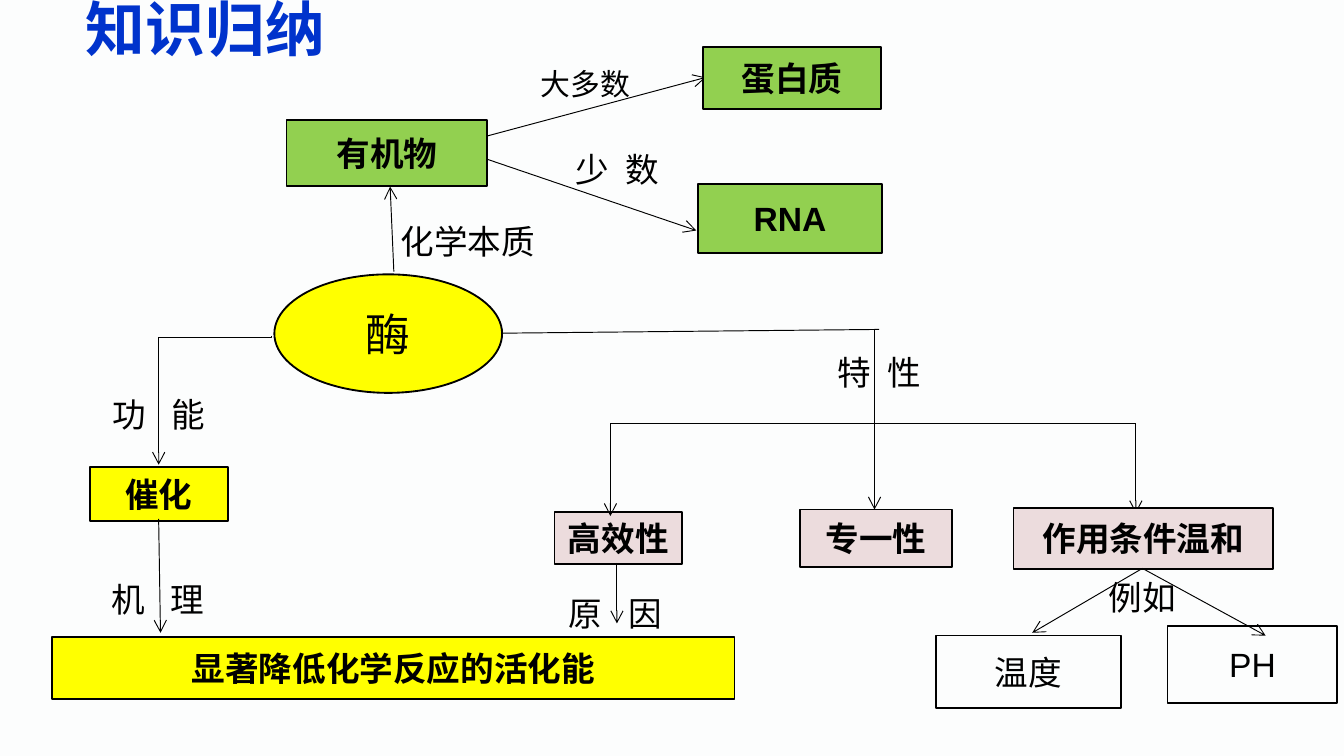
from lxml.etree import SubElement as Sub
from pptx import Presentation
from pptx.dml.color import RGBColor as RGB
from pptx.enum.shapes import MSO_CONNECTOR as LINK, MSO_SHAPE as SHAPE
from pptx.enum.text import MSO_ANCHOR as ANCHOR, MSO_AUTO_SIZE as FIT, PP_ALIGN as ALIGN
from pptx.oxml.ns import qn
from pptx.util import Pt

COLORS = {"back": "FCFDFD", "ink": "000000", "title": "0033CC", "green": "92D050",
          "yellow": "FFFF00", "pink": "ECDCDD"}
CJK = "Noto Sans CJK SC"


def write(shape, text, size=18, bold=False, color="ink", font="Arial",
          align=ALIGN.LEFT, anchor=ANCHOR.TOP, track=0):
    frame = shape.text_frame
    frame.word_wrap = True
    frame.vertical_anchor = anchor
    para = frame.paragraphs[0]
    para.alignment = align
    run = para.add_run()
    run.text = text
    run.font.size, run.font.bold, run.font.name = Pt(size), bold, font
    run.font.color.rgb = RGB.from_string(COLORS[color])
    props = run.font._element
    Sub(props, qn("a:ea"), typeface=CJK)
    if track:
        props.set("spc", str(int(track * 100)))


def link(x1, y1, x2, y2, arrow=True, bend=None):
    """Draw a line; bend is the share of the drop before an elbow turns."""
    kind = LINK.STRAIGHT if bend is None else LINK.ELBOW
    if bend is not None:
        # A quarter turn makes the elbow leave downwards
        mid, half = (x1 + x2) / 2, (y1 + y2) / 2
        wide, high = y2 - y1, x1 - x2
        x1, x2 = mid - wide / 2, mid + wide / 2
        y1, y2 = half - high / 2, half + high / 2
    line = slide.shapes.add_connector(kind, Pt(x1), Pt(y1), Pt(x2), Pt(y2))
    line.line.color.rgb = RGB.from_string(COLORS["ink"])
    line.line.width = Pt(0.5)
    props = line._element.spPr
    if bend is not None:
        props.find(qn("a:xfrm")).set("rot", "5400000")
        guides = props.find(qn("a:prstGeom")).find(qn("a:avLst"))
        Sub(guides, qn("a:gd"), name="adj1", fmla=f"val {round(bend * 100000)}")
    if arrow:
        Sub(props.find(qn("a:ln")), qn("a:tailEnd"), type="arrow")
    Sub(props, qn("a:effectLst"))


deck = Presentation()
deck.slide_width, deck.slide_height = Pt(720), Pt(405)
slide = deck.slides.add_slide(deck.slide_layouts[5])
slide.background.fill.solid()
slide.background.fill.fore_color.rgb = RGB.from_string(COLORS["back"])

# Title
title = slide.shapes.title
title.left, title.top, title.width, title.height = Pt(46), Pt(0), Pt(156), Pt(39)
frame = title.text_frame
frame.margin_left = frame.margin_right = frame.margin_top = frame.margin_bottom = 0
write(title, "知识归纳", size=32, bold=True, color="title", font=CJK)
frame.paragraphs[0].line_spacing = 0.9

# Lines behind the boxes
for ends in [
    (211, 145.5, 209, 100),       # enzyme to organic matter
    (260.5, 73, 378, 41.5),       # organic matter to protein
    (261.5, 85.5, 373, 123.5),    # organic matter to RNA
    (608.5, 227, 608.5, 275),     # down to mild conditions
]:
    link(*ends)

# Boxes: text, left, top, width, height, fill, bold
for text, x, y, w, h, fill, bold in [
    ("酶", 147, 147, 122, 63.5, "yellow", False),
    ("有机物", 153.5, 64.5, 107.5, 35, "green", True),
    ("蛋白质", 376.5, 25, 95.5, 33.5, "green", True),
    ("RNA", 374, 98.5, 98.5, 37, "green", True),
    ("催化", 48, 250, 74, 29, "yellow", True),
    ("显著降低化学反应的活化能", 28, 341.5, 365.5, 33, "yellow", True),
    ("高效性", 297, 274.5, 68.5, 27.5, "pink", True),
    ("专一性", 428.5, 273, 81.5, 31, "pink", True),
    ("作用条件温和", 543, 272, 139, 33, "pink", True),
    ("温度", 501.5, 340.5, 99, 39, None, False),
    ("PH", 625.5, 335.5, 91, 41, None, False),
]:
    root = text == "酶"
    box = slide.shapes.add_shape(SHAPE.OVAL if root else SHAPE.RECTANGLE,
                                 Pt(x), Pt(y), Pt(w), Pt(h))
    box.shadow.inherit = False
    if fill:
        box.fill.solid()
        box.fill.fore_color.rgb = RGB.from_string(COLORS[fill])
    else:
        box.fill.background()
    box.line.color.rgb = RGB.from_string(COLORS["ink"])
    box.line.width = Pt(1)
    write(box, text, size=24 if root else 18, bold=bold,
          align=ALIGN.CENTER, anchor=ANCHOR.MIDDLE)

# Lines in front of the boxes
link(145.5, 180, 85, 249, bend=0.016)         # enzyme to catalysis
link(468.5, 177, 327, 276.5, bend=0.5)        # traits to efficiency
link(268.5, 178.5, 471, 176.5, arrow=False)   # enzyme to traits
link(468, 227, 608.5, 227, arrow=False)       # traits to the right
for ends in [
    (468.5, 224, 468.5, 273),     # traits to specificity
    (85, 278, 86, 339),           # catalysis to mechanism
    (330.5, 301.5, 330.5, 334),   # efficiency to reason
    (612, 304.5, 553, 339),       # conditions to temperature
    (612, 304.5, 678, 340.5),     # conditions to PH
]:
    link(*ends)

# Labels: text, left, top, width, size, letter spacing
for text, x, y, w, size, track in [
    ("化学本质", 207.5, 115, 88.5, 18, 0),
    ("大多数", 282.5, 31.5, 78, 16, 0),
    ("少 数", 301, 76.5, 66, 18, 2.5),
    ("功 能", 53, 207.5, 72, 18, 5),
    ("特 性", 441.5, 185, 77, 18, 2.5),
    ("机 理", 52.5, 306.5, 67.5, 18, 5),
    ("原 因", 297.5, 314, 67, 18, 5),
    ("例如", 587, 305.5, 55.5, 18, 0),
]:
    label = slide.shapes.add_textbox(Pt(x), Pt(y), Pt(w), Pt(size + 10.8))
    label.text_frame.auto_size = FIT.SHAPE_TO_FIT_TEXT
    write(label, text, size=size, track=track)

deck.save("out.pptx")
